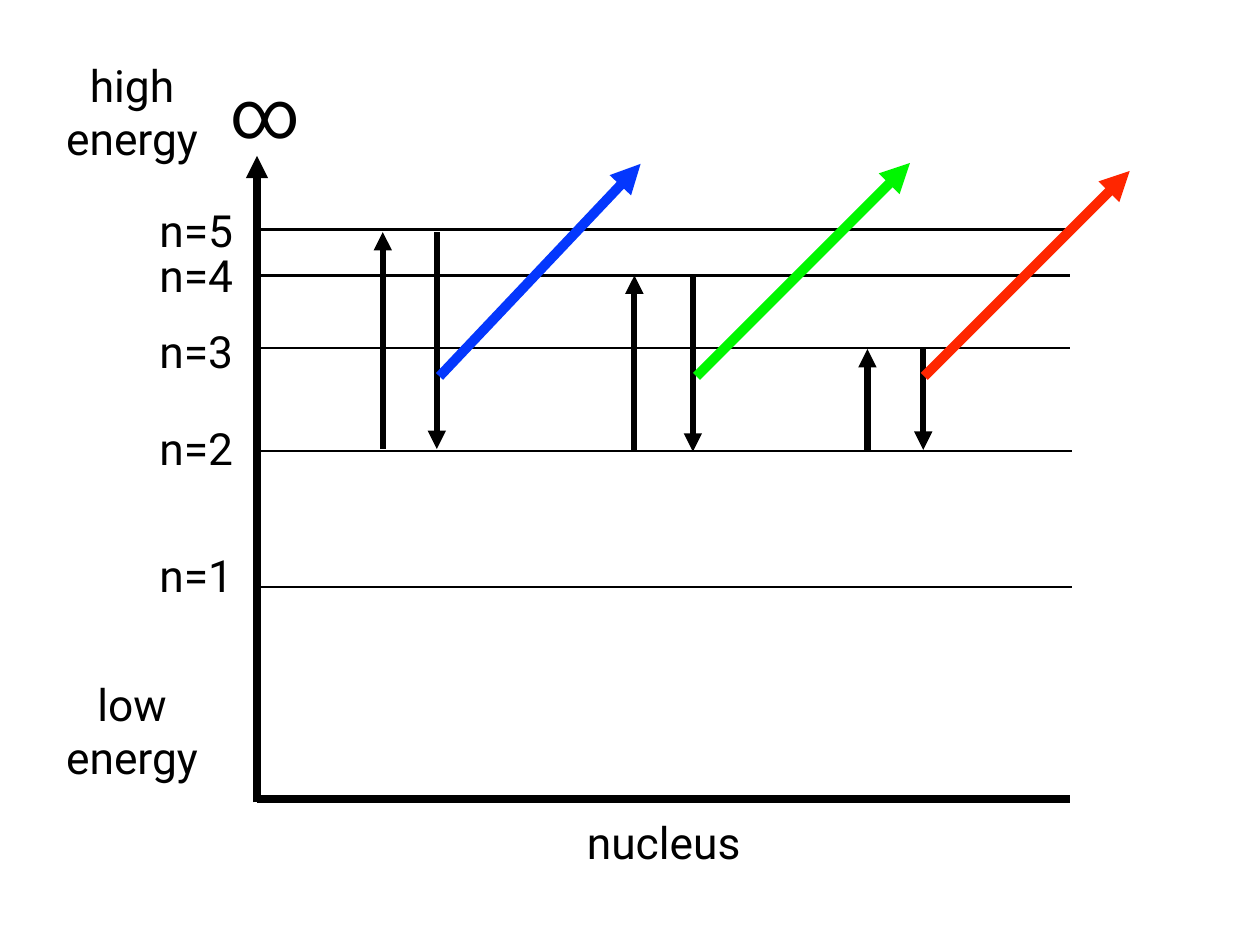
from pptx import Presentation
from pptx.dml.color import RGBColor
from pptx.enum.shapes import MSO_CONNECTOR
from pptx.enum.text import MSO_ANCHOR, MSO_AUTO_SIZE, PP_ALIGN
from pptx.oxml.ns import qn
from pptx.util import Inches, Pt
from lxml.etree import SubElement

COLORS = {"ink": "000000", "blue": "0437FD", "green": "00F600", "red": "FF2600"}
FONT = "Roboto"

# Level name: (line drop from the top of the axis, label drop, shift right)
LEVELS = {
    "n=1": (4.87, 4.38, 0.02),
    "n=2": (3.33, 2.94, 0.02),
    "n=3": (2.17, 1.84, 0),
    "n=4": (1.35, 0.99, 0),
    "n=5": (0.83, 0.48, 0),
}

# Jumps from the axis: up x, down x, top, bottom, ray start x, ray end, colour
JUMPS = [
    (1.42, 2.03, 0.86, 3.31, 2.06, (4.33, 0.09), "blue"),
    (4.26, 4.92, 1.35, 3.34, 4.96, (7.37, 0.08), "green"),
    (6.89, 7.52, 2.18, 3.32, 7.53, (9.85, 0.17), "red"),
]
RAY = 2.49  # drop at which every ray of light starts


def line(slide, start, end, width, color="ink", arrow=False):
    link = slide.shapes.add_connector(
        MSO_CONNECTOR.STRAIGHT, *[Inches(v) for v in (*start, *end)])
    link.line.width = Pt(width)
    link.line.color.rgb = RGBColor.from_string(COLORS[color])
    if arrow:
        SubElement(link.line._get_or_add_ln(), qn("a:tailEnd"), type="triangle")
    SubElement(link._element.spPr, qn("a:effectLst"))


def label(slide, box, text, size=36):
    shape = slide.shapes.add_textbox(*[Inches(v) for v in box])
    frame = shape.text_frame
    frame.word_wrap = False
    frame.auto_size = MSO_AUTO_SIZE.SHAPE_TO_FIT_TEXT
    frame.vertical_anchor = MSO_ANCHOR.MIDDLE
    frame.margin_left = frame.margin_right = Inches(0.06)
    frame.margin_top = frame.margin_bottom = Inches(0.06)
    frame.text = text
    for para in frame.paragraphs:
        para.alignment = PP_ALIGN.CENTER
        para.font.name = FONT
        para.font.size = Pt(size)
        para.font.color.rgb = RGBColor.from_string(COLORS["ink"])


def axes(slide, box):
    x, y, w, h = box
    line(slide, (x, y + h + 0.04), (x, y), 6, arrow=True)
    line(slide, (x, y + h), (x + w, y + h), 6)
    # Names along the axes
    label(slide, (x - 0.36, y - 1.02, 0.72, 1.03), "∞", 55)
    label(slide, (x - 2.25, y - 1.16, 1.68, 1.31), "high\nenergy")
    label(slide, (x - 2.25, y + h - 1.43, 1.68, 1.31), "low\nenergy")
    label(slide, (x + 3.65, y + h + 0.13, 1.88, 0.71), "nucleus")


def levels(slide, box):
    x, y, w, h = box
    for name, (drop, top, shift) in LEVELS.items():
        left = x + shift
        line(slide, (left, y + drop), (left + w, y + drop), 2)
        label(slide, (x - 1.19, y + top, 1.01, 0.71), name)


def jumps(slide, box):
    x, y, w, h = box
    # Electrons rise and fall
    for up, down, top, base, *_ in JUMPS:
        line(slide, (x + up, y + base), (x + up, y + top), 5, arrow=True)
        line(slide, (x + down, y + top), (x + down, y + base), 5, arrow=True)
    # Light given off, red at the back
    for *_, start, (right, top), color in reversed(JUMPS):
        line(slide, (x + start, y + RAY), (x + right, y + top), 8, color, True)


def main():
    deck = Presentation()
    deck.slide_width, deck.slide_height = Inches(14.22), Inches(10.67)
    slide = deck.slides.add_slide(deck.slide_layouts[6])
    box = (2.9, 1.76, 9.18, 7.26)
    for part in (axes, levels, jumps):
        part(slide, box)
    deck.save("out.pptx")


if __name__ == "__main__":
    main()
